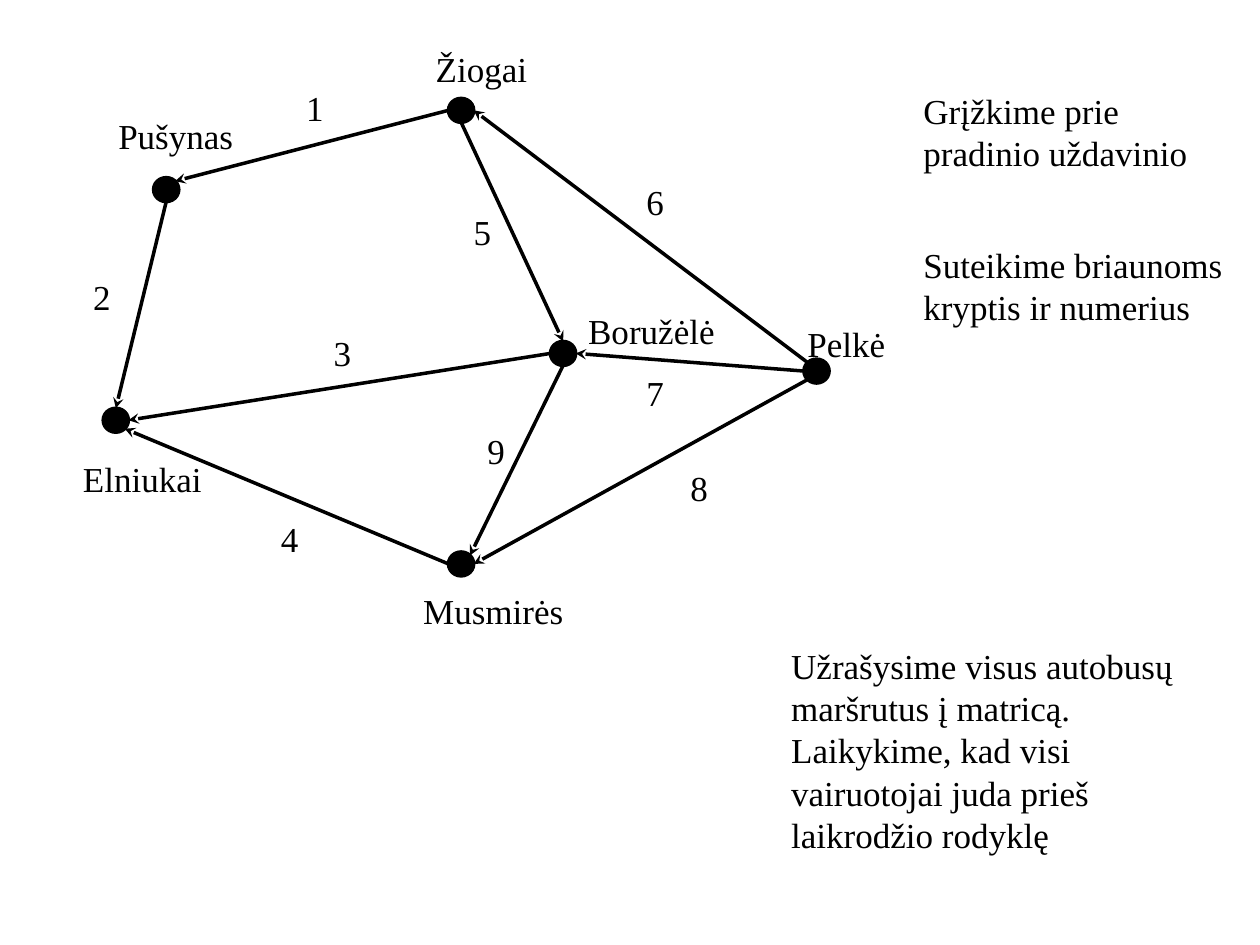
from math import cos, sin, radians
from lxml.etree import SubElement
from pptx import Presentation
from pptx.dml.color import RGBColor
from pptx.enum.shapes import MSO_CONNECTOR, MSO_SHAPE
from pptx.enum.text import MSO_AUTO_SIZE
from pptx.oxml.ns import qn
from pptx.util import Pt

INK = "000000"
WIDE, HIGH = 14.4, 13.7
PORTS = {"right": 0, "low right": 45, "low": 90, "low left": 135,
         "left": 180, "top left": 225, "top": 270, "top right": 315}

# name: node left, top; label left, top, width, height
STOPS = {
    "Pušynas": (87.8, 101.5, 60.5, 61.9, 87, 21.6),
    "Žiogai": (256.3, 56.2, 241.9, 23.8, 87, 21.6),
    "Boružėlė": (314.6, 195.1, 329, 173.5, 87, 21.6),
    "Elniukai": (59, 233.3, 40.3, 257.8, 87, 21.6),
    "Musmirės": (256.3, 315.4, 234.7, 333.4, 113.8, 31.7),
    "Pelkė": (459.4, 205.2, 454.3, 180.7, 87, 21.6),
}
ROUTES = [
    ("Pušynas", "top right", "Žiogai", "left", 167.8, 46.1),
    ("Elniukai", "top", "Pušynas", "low", 46.1, 154.1),
    ("Elniukai", "right", "Boružėlė", "left", 183.6, 185.8),
    ("Elniukai", "low right", "Musmirės", "left", 153.4, 292.3),
    ("Boružėlė", "top", "Žiogai", "low", 263.5, 116.6),
    ("Žiogai", "right", "Pelkė", "top left", 362.2, 99.4),
    ("Boružėlė", "right", "Pelkė", "left", 362.2, 208.8),
    ("Musmirės", "right", "Pelkė", "low left", 387.4, 262.8),
    ("Musmirės", "top right", "Boružėlė", "low", 271.4, 241.9),
]
NOTES = [
    ("Grįžkime prie pradinio uždavinio", 520.6, 47.5, 169.9, 55.4),
    ("Suteikime briaunoms kryptis ir numerius", 520.6, 135.4, 193, 55.4),
    ("Užrašysime visus autobusų maršrutus į matricą. Laikykime, kad visi "
     "vairuotojai juda prieš laikrodžio rodyklę", 445, 365, 246.2, 128.2),
]


def color(code):
    return RGBColor.from_string(code)


def write(frame, text, font="Times New Roman", size=20, ink=INK):
    run = frame.paragraphs[0].add_run()
    run.text = text
    run.font.name = font
    run.font.size = Pt(size)
    run.font.color.rgb = color(ink)


def port(stop, side):
    left, top = STOPS[stop][:2]
    turn = radians(PORTS[side])
    return (left + WIDE / 2 * (1 + cos(turn)),
            top + HIGH / 2 * (1 + sin(turn)))


class Board:
    """Holds the line style and the current slide, and draws on it."""

    def __init__(self, slide, ink=INK, weight=2):
        self.shapes = slide.shapes
        self.ink = ink
        self.weight = weight

    def stroke(self, line):
        line.color.rgb = color(self.ink)
        line.width = Pt(self.weight)

    def node(self, left, top):
        dot = self.shapes.add_shape(
            MSO_SHAPE.OVAL, Pt(left), Pt(top), Pt(WIDE), Pt(HIGH))
        dot.shadow.inherit = False
        dot.fill.solid()
        dot.fill.fore_color.rgb = color(self.ink)
        self.stroke(dot.line)

    def arrow(self, tip, tail):
        edge = self.shapes.add_connector(
            MSO_CONNECTOR.STRAIGHT, *map(Pt, tip + tail))
        self.stroke(edge.line)
        props = edge.element.spPr
        SubElement(props.find(qn("a:ln")), qn("a:headEnd"), type="stealth")
        SubElement(props, qn("a:effectLst"))

    def label(self, text, *box):
        frame = self.shapes.add_textbox(*map(Pt, box)).text_frame
        frame.word_wrap = True
        frame.auto_size = MSO_AUTO_SIZE.SHAPE_TO_FIT_TEXT
        write(frame, text)


def main():
    deck = Presentation()
    deck.slide_width, deck.slide_height = Pt(720), Pt(540)
    board = Board(deck.slides.add_slide(deck.slide_layouts[6]))
    for left, top, *_ in STOPS.values():
        board.node(left, top)
    for goal, inn, start, out, *_ in ROUTES:
        board.arrow(port(goal, inn), port(start, out))
    for name, (_, _, *box) in STOPS.items():
        board.label(name, *box)
    for count, (*_, left, top) in enumerate(ROUTES, 1):
        board.label(str(count), left, top, 29.5, 31.7)
    for note in NOTES:
        board.label(*note)
    deck.save("out.pptx")


if __name__ == "__main__":
    main()
